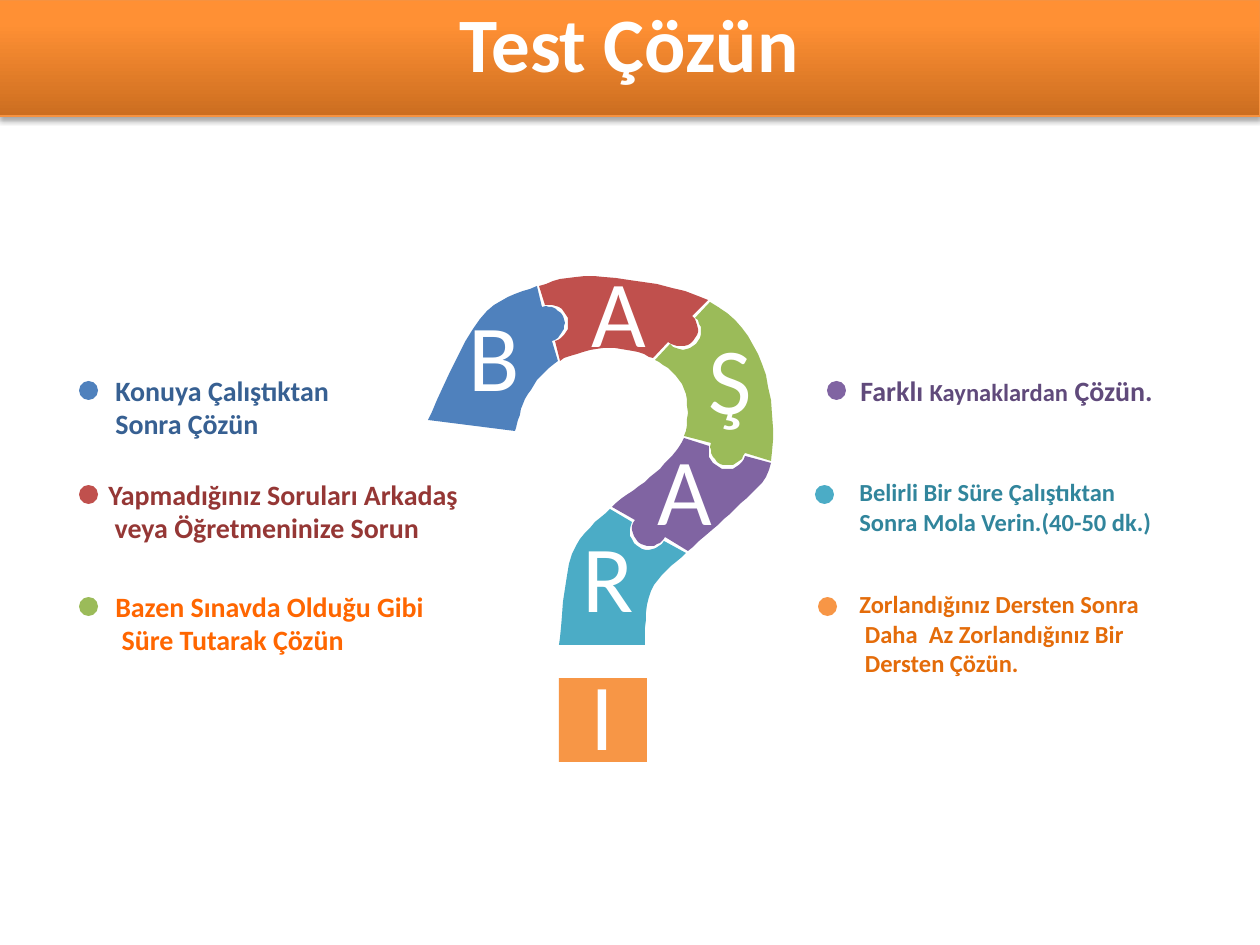
import math
from lxml import etree
from pptx import Presentation
from pptx import util as u
from pptx.dml.color import RGBColor
from pptx.enum import shapes, text
from pptx.oxml import parse_xml
from pptx.oxml.ns import nsdecls, qn

PX = u.Inches(1) / 126
STEPS = 8   # straight pieces per curve
KNOB = 18   # radius of a jigsaw knob
GAP = 1.5   # half the space between two pieces
DOT = 19
BOX = 48
HUES = dict(
    blue="4F81BD", red="C0504D", green="9BBB59", violet="8064A2", teal="4BACC6",
    orange="F79646", navy="376092", maroon="953735", amber="FF6600", plum="604A7B",
    sea="31859C", rust="E46C0A", white="FFFFFF", edge="F69240",
    deep="CC6E20", warm="FF9034", glow="FF9136", black="000000")

# Both sides of the question mark: every second point lies on a seam.
OUTER = [(428, 420), (480, 319), (538, 286), (604, 277), (709, 301), (762, 364),
         (771, 462), (736, 508), (687, 552), (651, 591), (645, 645)]
INNER = [(515, 431), (528, 394), (559, 361), (609, 348), (654, 359), (684, 389),
         (684, 437), (655, 473), (611, 508), (572, 554), (559, 645)]
PIECES = ["blue", "red", "green", "violet", "teal"]
LETTERS = [("B", 469, 330), ("A", 592, 286), ("Ş", 706, 353),
           ("A", 658, 464), ("R", 583, 551), ("I", 578, 689)]
ROWS = [381, 485, 597]
# Dot colour and left, text left and width, text colour, size, lines.
LEFT = [
    ("blue", 79, 103, 248, "navy", 16,
     ["Konuya Çalıştıktan", "Sonra Çözün"]),
    ("red", 79, 96, 379, "maroon", 16,
     ["Yapmadığınız Soruları Arkadaş", " veya Öğretmeninize Sorun"]),
    ("green", 79, 103, 339, "amber", 16,
     ["Bazen Sınavda Olduğu Gibi", " Süre Tutarak Çözün"]),
]
RIGHT = [
    ("violet", 827, 848, 320, "plum", 16,
     [[("Farklı ", 16), ("Kaynaklardan", 14), (" Çözün.", 16)]]),
    ("teal", 815, 847, 402, "sea", 14,
     ["Belirli Bir Süre Çalıştıktan", "Sonra Mola Verin.(40-50 dk.)"]),
    ("orange", 818, 847, 394, "rust", 14,
     ["Zorlandığınız Dersten Sonra", " Daha  Az Zorlandığınız Bir", " Dersten Çözün."]),
]


def px(*vals):
    return [u.Emu(round(v * PX)) for v in vals]


def paint(shape, hue):
    shape.shadow.inherit = False
    shape.fill.solid()
    shape.fill.fore_color.rgb = RGBColor.from_string(HUES[hue])
    shape.line.fill.background()


def form(slide, kind, *box, hue):
    shape = slide.shapes.add_shape(kind, *px(*box))
    paint(shape, hue)
    return shape


def curve(side, start):
    """Points of a smooth (Catmull-Rom) line between two seams, ends left out."""
    pts = []
    for i in (start, start + 1):
        a, b, c, d = (side[min(max(j, 0), len(side) - 1)] for j in range(i - 1, i + 3))
        for step in range(STEPS):
            t = step / STEPS
            pts.append(tuple(
                b[k] + t / 2 * (c[k] - a[k]
                                + t * (2 * a[k] - 5 * b[k] + 4 * c[k] - d[k])
                                + t * t * (3 * b[k] - a[k] - 3 * c[k] + d[k]))
                for k in (0, 1)))
    return pts[1:]


def seam(num, way):
    """Points from outer to inner side; way is -1 before the gap, 1 after it."""
    p, q = OUTER[2 * num], INNER[2 * num]
    if num in (0, len(PIECES)):
        return [p, q]
    size = math.dist(p, q)
    dx, dy = (q[0] - p[0]) / size, (q[1] - p[1]) / size
    spots = [(0, 0)]
    for step in range(2 * STEPS + 1):
        turn = math.pi * step / (2 * STEPS)
        radius = KNOB + way / 2
        spots.append((size / 2 - radius * math.cos(turn), radius * math.sin(turn)))
    spots.append((size, 0))
    return [(p[0] + dx * along + dy * (out + way * GAP),
             p[1] + dy * along - dx * (out + way * GAP)) for along, out in spots]


def piece(slide, num, hue):
    pts = (curve(OUTER, 2 * num) + seam(num + 1, -1)
           + curve(INNER, 2 * num)[::-1] + seam(num, 1)[::-1])
    pen = slide.shapes.build_freeform(*pts[0], scale=PX)
    pen.add_line_segments(pts[1:], close=True)
    paint(pen.convert_to_shape(), hue)


def write(frame, lines, *, size, hue, bold=False, align=text.PP_ALIGN.LEFT,
          anchor=text.MSO_ANCHOR.TOP, space=None, wrap=True, pad=None):
    """Fill a frame; a line is a string or a list of (string, size)."""
    frame.word_wrap = wrap
    frame.vertical_anchor = anchor
    if pad is not None:
        frame.margin_left = frame.margin_right = pad
        frame.margin_top = frame.margin_bottom = pad
    for i, line in enumerate(lines):
        para = frame.add_paragraph() if i else frame.paragraphs[0]
        para.alignment = align
        para.line_spacing = space
        for part, pts in [(line, size)] if isinstance(line, str) else line:
            run = para.add_run()
            run.text = part
            run.font.name = "Calibri"
            run.font.size = u.Pt(pts)
            run.font.bold = bold
            run.font.color.rgb = RGBColor.from_string(HUES[hue])


def label(slide, *box, lines, **look):
    write(slide.shapes.add_textbox(*px(*box)).text_frame, lines, **look)


def tips(slide, items):
    for y, (dot, x, left, width, hue, size, lines) in zip(ROWS, items):
        form(slide, shapes.MSO_SHAPE.OVAL, x, y, DOT, DOT, hue=dot)
        tall = round(len(lines) * size * 2.1) + 13
        label(slide, left, y - 14, width, tall, lines=lines, size=size, hue=hue, bold=True)


def banner(slide, title):
    bar = form(slide, shapes.MSO_SHAPE.RECTANGLE, -1, 0, 1261, 116, hue="warm")
    stops = "".join(
        f'<a:gs pos="{pos}000"><a:srgbClr val="{HUES[hue]}"/></a:gs>'
        for pos, hue in ((0, "deep"), (80, "warm"), (100, "glow")))
    props = bar.element.spPr
    props.replace(props.find(qn("a:solidFill")), parse_xml(
        f'<a:gradFill {nsdecls("a")} rotWithShape="1"><a:gsLst>{stops}</a:gsLst>'
        '<a:lin ang="16200000" scaled="0"/></a:gradFill>'))
    bar.line.color.rgb = RGBColor.from_string(HUES["edge"])
    bar.line.width = u.Pt(0.75)
    shade = etree.SubElement(
        props.find(qn("a:effectLst")), qn("a:outerShdw"), blurRad=str(u.Pt(3.1)),
        dist=str(u.Pt(1.8)), dir="5400000", rotWithShape="0")
    tint = etree.SubElement(shade, qn("a:srgbClr"), val=HUES["black"])
    etree.SubElement(tint, qn("a:alpha"), val="35000")
    write(bar.text_frame, [title], size=44, hue="white", bold=True,
          align=text.PP_ALIGN.CENTER, space=0.9)


def main():
    deck = Presentation()
    deck.slide_width, deck.slide_height = px(1260, 945)
    slide = deck.slides.add_slide(deck.slide_layouts[6])
    for num, hue in enumerate(PIECES):
        piece(slide, num, hue)
    form(slide, shapes.MSO_SHAPE.RECTANGLE, 559, 678, 88, 84, hue="orange")
    tips(slide, LEFT)
    tips(slide, RIGHT)
    for char, x, y in LETTERS:
        label(slide, x, y, BOX, BOX, lines=[char], size=54, hue="white", wrap=False,
              pad=0, align=text.PP_ALIGN.CENTER, anchor=text.MSO_ANCHOR.MIDDLE)
    banner(slide, "Test Çözün")
    deck.save("out.pptx")


if __name__ == "__main__":
    main()
